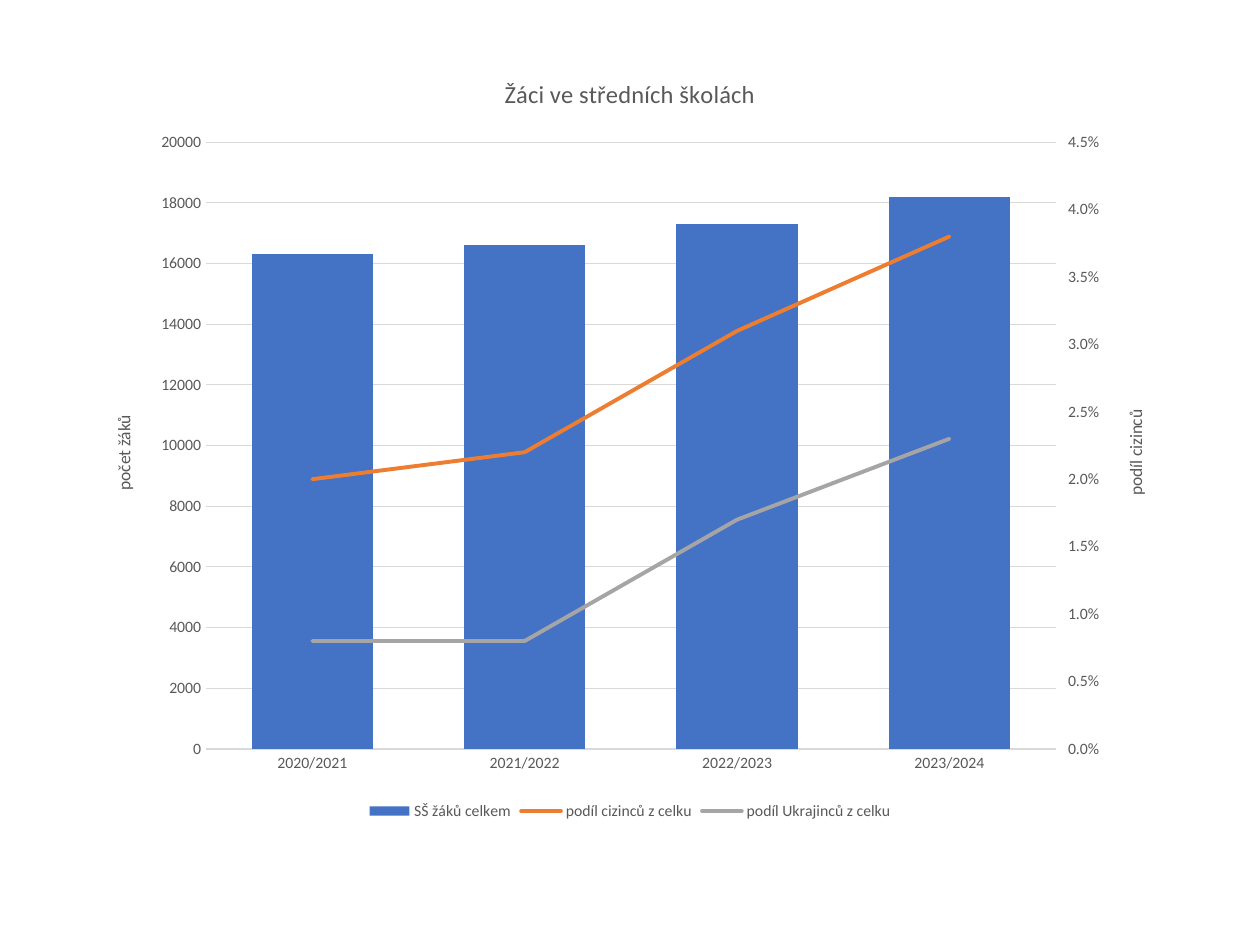
from copy import deepcopy

from pptx import Presentation
from pptx.chart.axis import ValueAxis
from pptx.chart.data import CategoryChartData
from pptx.dml.color import RGBColor
from pptx.enum.chart import XL_CHART_TYPE, XL_LEGEND_POSITION, XL_MARKER_STYLE, XL_TICK_MARK
from pptx.oxml import parse_xml
from pptx.oxml.ns import nsdecls
from pptx.util import Pt

YEARS = ["2020/2021", "2021/2022", "2022/2023", "2023/2024"]
TOTAL = ("SŠ žáků celkem", [16300, 16600, 17300, 18200], "4472C4")
SHARES = [
    ("podíl cizinců z celku", [0.02, 0.022, 0.031, 0.038], "ED7D31"),
    ("podíl Ukrajinců z celku", [0.008, 0.008, 0.017, 0.023], "A5A5A5"),
]


def color(code):
    return RGBColor.from_string(code)


class Deck:
    face = "Calibri"
    ink = "595959"
    rule = "D9D9D9"

    def __init__(self):
        self.file = Presentation()
        self.file.slide_width, self.file.slide_height = Pt(720), Pt(540)
        self.slide = self.file.slides.add_slide(self.file.slide_layouts[6])

    def style(self, font, size):
        font.name, font.size, font.bold = self.face, Pt(size), False
        font.color.rgb = color(self.ink)

    def stroke(self, line, code, width):
        line.color.rgb = color(code)
        line.width = Pt(width)

    def title(self, frame, text, size):
        frame.text = text
        self.style(frame.paragraphs[0].font, size)

    def scale(self, axis, text, top, step, form):
        axis.minimum_scale, axis.maximum_scale, axis.major_unit = 0, top, step
        axis.tick_labels.number_format = form
        axis.tick_labels.number_format_is_linked = False
        self.style(axis.tick_labels.font, 9)
        axis.format.line.fill.background()
        self.title(axis.axis_title.text_frame, text, 10)
        body = axis.axis_title.element.xpath(".//a:bodyPr")[0]
        body.set("rot", "-5400000")
        body.set("vert", "horz")

    def split(self, chart):
        root = chart.element
        bars, base, left = (root.xpath(f".//c:{tag}")[0] for tag in ("barChart", "catAx", "valAx"))
        lines = parse_xml(
            f'<c:lineChart {nsdecls("c")}><c:grouping val="standard"/><c:varyColors val="0"/>'
            '<c:marker val="1"/><c:axId val="101"/><c:axId val="102"/></c:lineChart>')
        bars.addnext(lines)
        for item in bars.xpath("c:ser")[1:]:
            for flag in item.xpath("c:invertIfNegative"):
                item.remove(flag)
            lines.xpath("c:marker")[0].addprevious(item)
        right, hidden = deepcopy(left), deepcopy(base)
        left.addnext(right)
        right.addnext(hidden)
        for axis, own, other in ((hidden, "101", "102"), (right, "102", "101")):
            axis.xpath("c:axId")[0].set("val", own)
            axis.xpath("c:crossAx")[0].set("val", other)
        hidden.xpath("c:delete")[0].set("val", "1")
        right.xpath("c:axPos")[0].set("val", "r")
        right.xpath("c:crosses")[0].set("val", "max")
        return ValueAxis(right)

    def chart(self, x, y, width, height):
        data = CategoryChartData()
        data.categories = YEARS
        for name, values, _ in [TOTAL, *SHARES]:
            data.add_series(name, values)
        chart = self.slide.shapes.add_chart(
            XL_CHART_TYPE.COLUMN_CLUSTERED, Pt(x), Pt(y), Pt(width), Pt(height), data).chart
        self.style(chart.font, 10)
        self.title(chart.chart_title.text_frame, "Žáci ve středních školách", 14)
        chart.has_legend = True
        chart.legend.position = XL_LEGEND_POSITION.BOTTOM
        chart.legend.include_in_layout = False
        self.style(chart.legend.font, 9)

        base, left = chart.category_axis, chart.value_axis
        base.major_tick_mark = left.major_tick_mark = XL_TICK_MARK.NONE
        self.style(base.tick_labels.font, 9)
        self.stroke(base.format.line, self.rule, 0.75)
        right = self.split(chart)
        self.scale(left, "počet žáků", 20000, 2000, "General")
        self.stroke(left.major_gridlines.format.line, self.rule, 0.75)
        right.has_major_gridlines = False
        right.major_tick_mark = XL_TICK_MARK.OUTSIDE
        self.scale(right, "podíl cizinců", 0.045, 0.005, "0.0%")

        bars, lines = chart.plots
        bars.gap_width, bars.overlap, bars.vary_by_categories = 75, -25, False
        fill = bars.series[0].format.fill
        fill.solid()
        fill.fore_color.rgb = color(TOTAL[2])
        for item, (_, _, code) in zip(lines.series, SHARES):
            self.stroke(item.format.line, code, 2.25)
            item.marker.style = XL_MARKER_STYLE.NONE
            item.smooth = False
        for line in chart.element.xpath(".//c:lineChart/c:ser/c:spPr/a:ln"):
            line.set("cap", "rnd")

    def save(self):
        self.file.save("out.pptx")


if __name__ == "__main__":
    deck = Deck()
    deck.chart(49.7, 28.8, 620.6, 442.8)
    deck.save()
